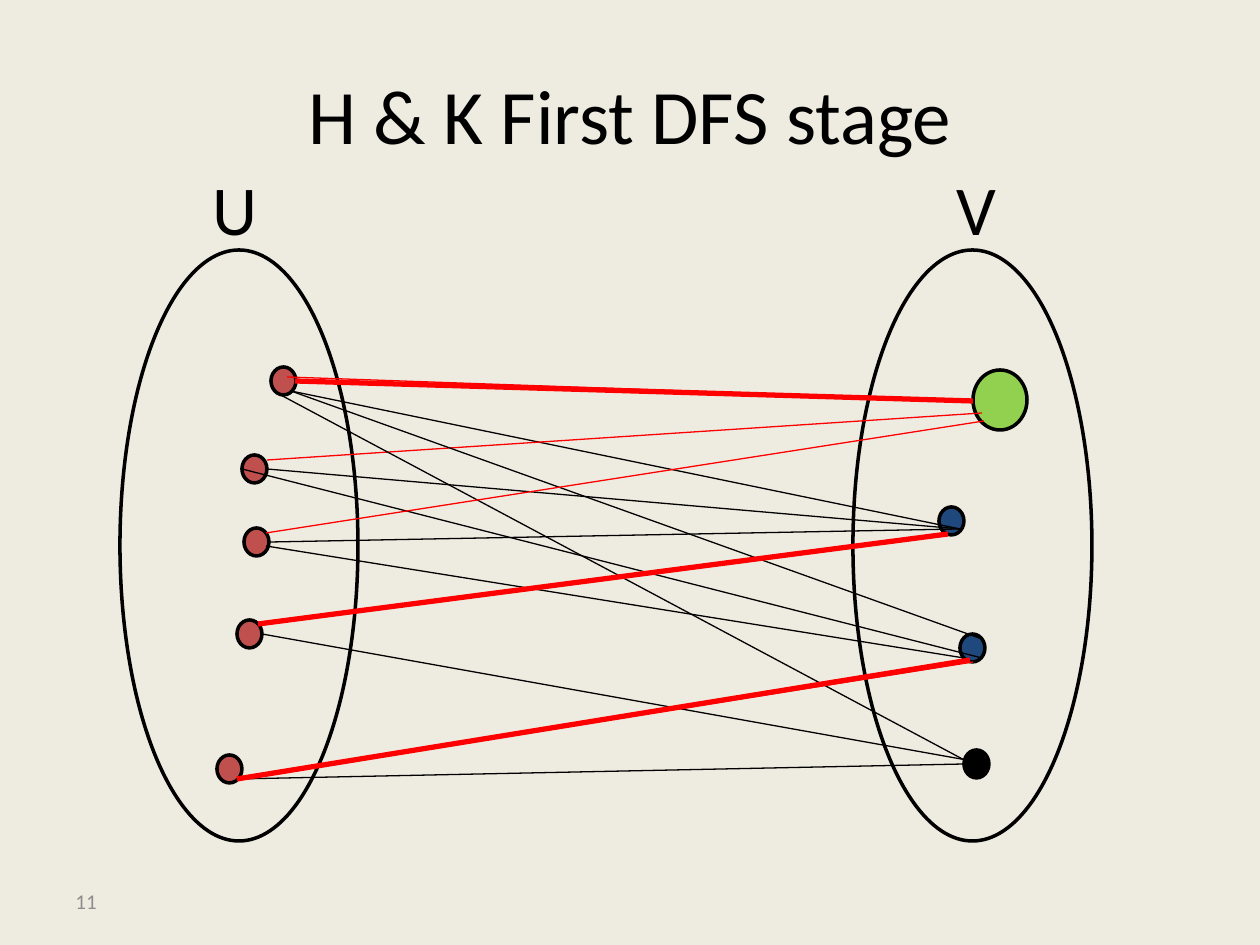
from lxml.etree import SubElement
from pptx import Presentation
from pptx.dml.color import RGBColor
from pptx.enum.shapes import MSO_CONNECTOR, MSO_SHAPE
from pptx.enum.text import MSO_ANCHOR, PP_ALIGN
from pptx.oxml.ns import qn
from pptx.util import Emu, Pt

EMU_PER_PX = 914400 / 126
BLACK, RED, GREY = "000000", "FF0000", "8C8C8C"
ROSE, NAVY, GREEN, CREAM = "C0504D", "1F497D", "92D050", "EEECE1"
THIN, OUTLINE, BOLD = 0.75, 2, 3

SETS = [(120, 250, 238, 591), (853, 250, 239, 591)]
NODE_SIZE = (25, 28)
NODES = [
    (271, 367, ROSE), (964, 750, BLACK), (242, 455, ROSE), (244, 528, ROSE),
    (237, 620, ROSE), (217, 755, ROSE), (939, 507, NAVY), (960, 634, NAVY),
]
FREE_NODE = (973, 370, 54, 60)
EDGES = [
    (291, 391, 960, 529, BLACK), (267, 460, 982, 413, RED),
    (242, 469, 982, 658, BLACK), (237, 779, 964, 764, BLACK),
    (262, 634, 989, 764, BLACK), (291, 391, 982, 639, BLACK),
    (287, 377, 973, 401, RED), (258, 624, 946, 533, RED),
    (277, 393, 968, 762, BLACK), (266, 546, 964, 658, BLACK),
    (267, 469, 960, 529, BLACK), (266, 533, 984, 421, RED),
    (960, 529, 270, 542, BLACK), (973, 662, 237, 779, RED),
]
MATCHING = [(295, 381, 973, 401), (258, 624, 948, 534), (237, 779, 970, 660)]


def px(length):
    """Turn pixels into EMU."""
    return Emu(round(length * EMU_PER_PX))


def color(hex_string):
    """Turn a hex string into a colour."""
    return RGBColor.from_string(hex_string)


def add_text(slide, text, box, size, align, anchor=MSO_ANCHOR.TOP, ink=BLACK):
    """Add one line of Calibri text in a wrapping box."""
    text_frame = slide.shapes.add_textbox(*map(px, box)).text_frame
    text_frame.word_wrap = True
    text_frame.vertical_anchor = anchor
    text_frame.text = text
    paragraph = text_frame.paragraphs[0]
    paragraph.alignment = align
    font = paragraph.runs[0].font
    font.name = "Calibri"
    font.size = Pt(size)
    font.color.rgb = color(ink)


def add_round(slide, preset, box, fill=None):
    """Add an outlined round shape, hollow unless a fill is given."""
    shape = slide.shapes.add_shape(preset, *map(px, box))
    shape.shadow.inherit = False
    if fill:
        shape.fill.solid()
        shape.fill.fore_color.rgb = color(fill)
    else:
        shape.fill.background()
    shape.line.color.rgb = color(BLACK)
    shape.line.width = Pt(OUTLINE)


def add_edge(slide, ends, ink, width):
    """Add a straight graph edge without shadow."""
    edge = slide.shapes.add_connector(MSO_CONNECTOR.STRAIGHT, *map(px, ends))
    edge.line.color.rgb = color(ink)
    edge.line.width = Pt(width)
    SubElement(edge._element.spPr, qn("a:effectLst"))


def main():
    """Build the matching slide and save it."""
    presentation = Presentation()
    presentation.slide_width, presentation.slide_height = px(1260), px(945)
    slide = presentation.slides.add_slide(presentation.slide_layouts[6])
    slide.background.fill.solid()
    slide.background.fill.fore_color.rgb = color(CREAM)

    add_text(slide, "H & K First DFS stage", (63, 35, 1134, 158), 44,
             PP_ALIGN.CENTER, MSO_ANCHOR.MIDDLE)
    for box in SETS:
        add_round(slide, MSO_SHAPE.OVAL, box)
    for left, top, fill in NODES:
        add_round(slide, MSO_SHAPE.FLOWCHART_CONNECTOR, (left, top, *NODE_SIZE), fill)
    add_round(slide, MSO_SHAPE.FLOWCHART_CONNECTOR, FREE_NODE, GREEN)
    for *ends, ink in EDGES:
        add_edge(slide, ends, ink, THIN)
    add_text(slide, "U", (190, 159, 80, 183), 40, PP_ALIGN.RIGHT)
    add_text(slide, "V", (929, 159, 80, 97), 40, PP_ALIGN.RIGHT)
    for ends in MATCHING:
        add_edge(slide, ends, RED, BOLD)
    add_text(slide, "11", (63, 876, 294, 50), 12,
             PP_ALIGN.LEFT, MSO_ANCHOR.MIDDLE, GREY)
    presentation.save("out.pptx")


if __name__ == "__main__":
    main()
